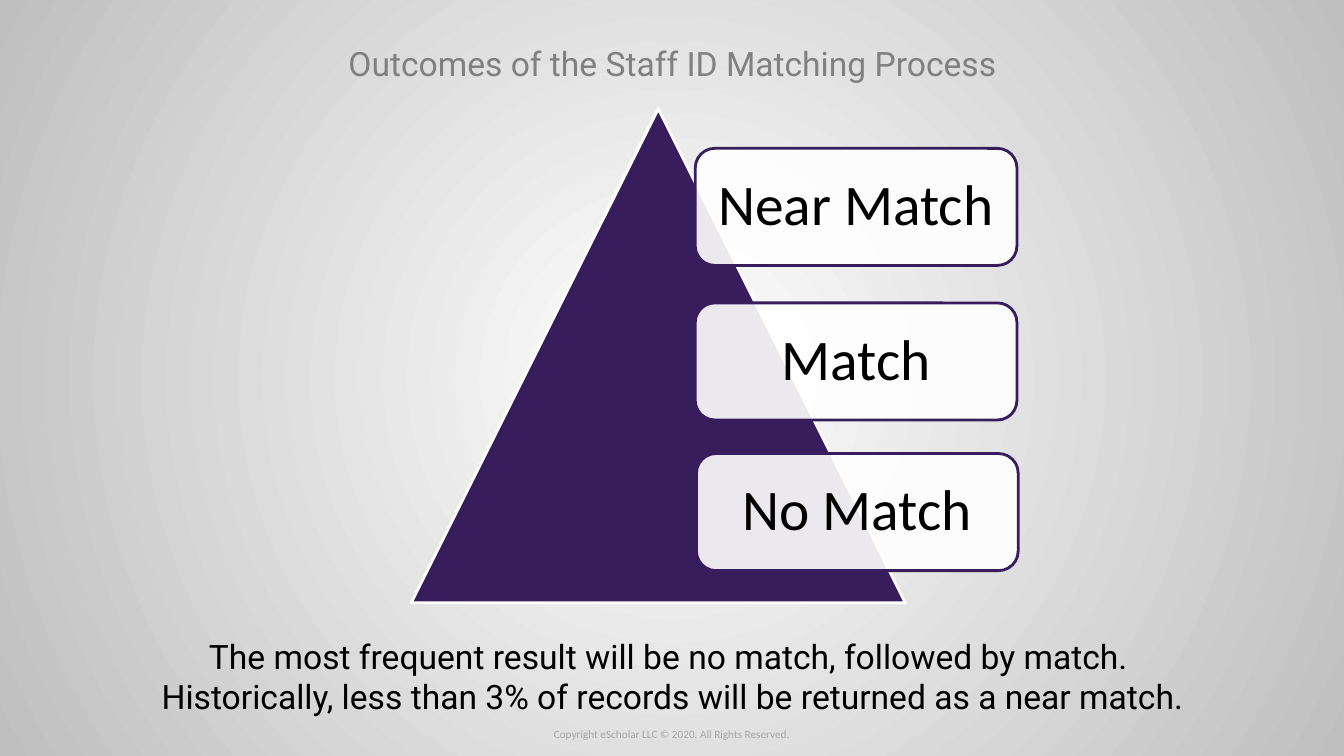
from lxml.etree import SubElement
from pptx import Presentation
from pptx.dml.color import RGBColor
from pptx.enum.shapes import MSO_SHAPE as Shape
from pptx.enum.text import MSO_ANCHOR as Anchor, PP_ALIGN as Align
from pptx.oxml.ns import qn
from pptx.util import Inches, Pt

COLORS = {
    "purple": "371D5B",
    "white": "FFFFFF",
    "edge": "BFBFBF",
    "title": "808080",
    "footer": "A6A6A6",
    "black": "000000",
}
OUTCOMES = [("Near Match", 46.8, 8), ("Match", 46.8, 39.3), ("No Match", 47, 69.8)]


def rgb(name):
    return RGBColor.from_string(COLORS[name])


def within(box, left, top, width, height):
    """Return the part of box given in percent of its width and height."""
    box_left, box_top, box_width, box_height = box
    return (
        int(box_left + box_width * left / 100),
        int(box_top + box_height * top / 100),
        int(box_width * width / 100),
        int(box_height * height / 100),
    )


def write(shape, lines, font_name, size, color, anchor=Anchor.TOP, wrap=True):
    frame = shape.text_frame
    frame.word_wrap = wrap
    frame.vertical_anchor = anchor
    frame.text = "\n".join(lines)
    for paragraph in frame.paragraphs:
        paragraph.alignment = Align.CENTER
        for run in paragraph.runs:
            run.font.name = font_name
            run.font.size = Pt(size)
            run.font.color.rgb = rgb(color)


def add_text(slide, box, *text_style):
    write(slide.shapes.add_textbox(*box), *text_style)


def add_outlined(slide, kind, box, fill, line):
    shape = slide.shapes.add_shape(kind, *box)
    shape.shadow.inherit = False
    shape.fill.solid()
    shape.fill.fore_color.rgb = rgb(fill)
    shape.line.color.rgb = rgb(line)
    shape.line.width = Pt(2)
    return shape


def paint_background(slide):
    """Fill the background with a circular gradient from the centre."""
    fill = slide.background.fill
    fill.gradient()
    for stop, color in zip(fill.gradient_stops, ("white", "edge")):
        stop.color.rgb = rgb(color)
    gradient = slide.element.find(".//" + qn("a:gradFill"))
    gradient.remove(gradient.find(qn("a:lin")))
    circle = SubElement(gradient, qn("a:path"), {"path": "circle"})
    sides = {side: "50000" for side in "ltrb"}
    SubElement(circle, qn("a:fillToRect"), sides)


def add_pyramid(slide, box):
    add_outlined(slide, Shape.ISOSCELES_TRIANGLE, within(box, 0, 0, 81.4, 100),
                 "purple", "white")
    for name, left, top in OUTCOMES:
        label = add_outlined(slide, Shape.ROUNDED_RECTANGLE,
                             within(box, left, top, 53, 23.7), "white", "purple")
        color = label.fill._xPr.find(".//" + qn("a:srgbClr"))
        SubElement(color, qn("a:alpha"), {"val": "90000"})
        write(label, [name], "Calibri", 41, "black", Anchor.MIDDLE, False)
        label.text_frame.paragraphs[0].line_spacing = 0.9


def build_slide(presentation):
    slide = presentation.slides.add_slide(presentation.slide_layouts[6])
    page = (0, 0, presentation.slide_width, presentation.slide_height)
    paint_background(slide)
    add_text(slide, within(page, 0, 95.6, 100, 3.2),
             ["Copyright eScholar LLC © 2020. All Rights Reserved."],
             "Calibri", 8, "footer")
    add_text(slide, within(page, 4.58, 2.27, 90.9, 12.13),
             ["Outcomes of the Staff ID Matching Process"],
             "Roboto", 24, "title", Anchor.MIDDLE)
    add_pyramid(slide, within(page, 30.6, 14.4, 45.16, 65.33))
    add_text(slide, within(page, 4.58, 83.47, 90.9, 12.13),
             ["The most frequent result will be no match, followed by match. ",
              "Historically, less than 3% of records will be returned as a near match."],
             "Roboto", 24, "black")


def main():
    presentation = Presentation()
    presentation.slide_width = Inches(13.33)
    presentation.slide_height = Inches(7.5)
    build_slide(presentation)
    presentation.save("out.pptx")


if __name__ == "__main__":
    main()
